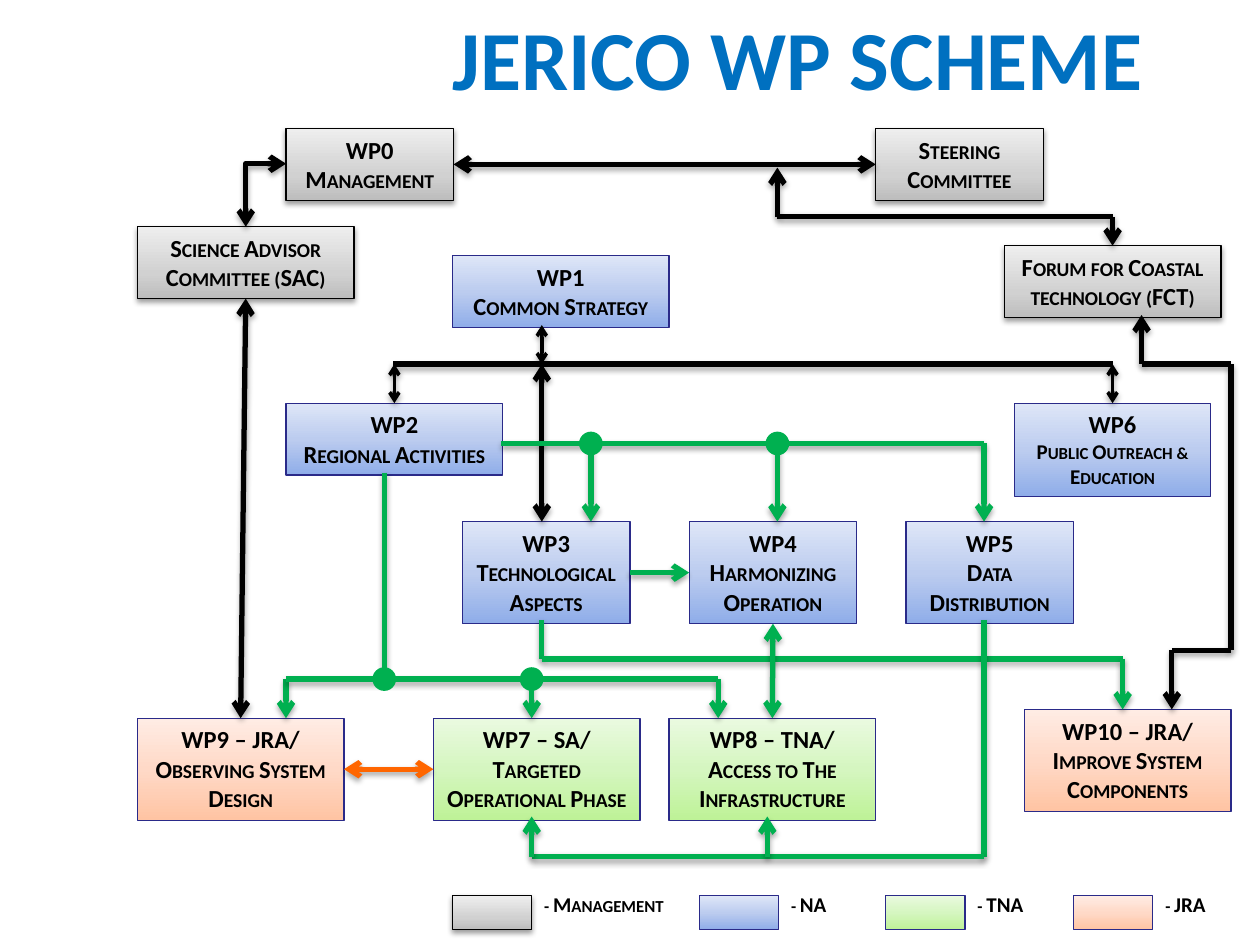
from itertools import pairwise
from copy import deepcopy
from lxml.etree import SubElement
from pptx import Presentation
from pptx.dml.color import RGBColor
from pptx.enum.shapes import MSO_CONNECTOR as CXN, MSO_SHAPE as SHAPE
from pptx.enum.text import MSO_ANCHOR, MSO_AUTO_SIZE, PP_ALIGN
from pptx.oxml.ns import qn
from pptx.util import Pt

PX = 9144  # 100 px to the inch
TOP, LEFT, BOTTOM, RIGHT = range(4)
COLORS = {"black": "000000", "navy": "2A2A89", "title": "0070C0",
          "green": "00B050", "orange": "FF6600"}
GRADIENTS = {
    "management": (0.35, "BDBDBD", "D1D1D1", "EEEEEE"),
    "na": (0.5, "8FADE9", "BCCCEF", "DEE6F7"),
    "tna": (0.5, "BEF297", "D5F6C0", "EAFAE0"),
    "jra": (0.5, "FFC4A3", "FFD9C7", "FFECE4"),
}


class Scheme:
    font = "Calibri"

    def __init__(self, slide):
        self.s = slide

    def rgb(self, name):
        return RGBColor.from_string(COLORS[name])

    def add_shadow(self, effects, dist, alpha):
        shadow = SubElement(effects, qn("a:outerShdw"), blurRad="40000", dist=str(dist),
                            dir="5400000", rotWithShape="0")
        color = SubElement(shadow, qn("a:srgbClr"), val=COLORS["black"])
        SubElement(color, qn("a:alpha"), val=str(alpha * 1000))

    def fill_text(self, shape, paras, color="black", align=PP_ALIGN.CENTER):
        """Fill a shape with paragraphs, each a list of (text, size, small caps) runs."""
        tf = shape.text_frame
        tf.word_wrap = True
        tf.auto_size = MSO_AUTO_SIZE.SHAPE_TO_FIT_TEXT
        tf.vertical_anchor = MSO_ANCHOR.TOP
        for i, runs in enumerate(paras):
            p = tf.add_paragraph() if i else tf.paragraphs[0]
            p.alignment = align
            for text, size, small in runs:
                r = p.add_run()
                r.text = text
                r.font.name, r.font.size, r.font.bold = self.font, Pt(size), True
                r.font.color.rgb = self.rgb(color)
                if small:
                    r.font._element.set("cap", "small")

    def text(self, x, y, w, h, runs, **style):
        self.fill_text(self.s.shapes.add_textbox(x * PX, y * PX, w * PX, h * PX), [runs], **style)

    def box(self, kind, x, y, w, h, *paras):
        sp = self.s.shapes.add_shape(SHAPE.RECTANGLE, x * PX, y * PX, w * PX, h * PX)
        middle, *colors = GRADIENTS[kind]
        sp.fill.gradient()
        sp.fill.gradient_angle = 90
        stops = sp._element.spPr.find(".//" + qn("a:gsLst"))
        stops.insert(1, deepcopy(stops[0]))
        for stop, position, color in zip(sp.fill.gradient_stops, (0, middle, 1), colors):
            stop.position = position
            stop.color.rgb = RGBColor.from_string(color)
        managed = kind == "management"
        sp.line.color.rgb = self.rgb("black" if managed else "navy")
        sp.line.width = Pt(0.75)
        sp.shadow.inherit = False
        if managed:
            self.add_shadow(sp._element.spPr.find(qn("a:effectLst")), 20000, 38)
        if paras:
            self.fill_text(sp, paras)
        return sp

    def style_line(self, cxn, color, head, tail, pt=3):
        cxn.line.color.rgb = self.rgb(color)
        cxn.line.width = Pt(pt)
        ln = cxn.get_or_add_ln()
        for tag, wanted in (("a:headEnd", head), ("a:tailEnd", tail)):
            if wanted:
                SubElement(ln, qn(tag), type="arrow")
        self.add_shadow(SubElement(cxn._element.spPr, qn("a:effectLst")), 23000, 35)

    def route(self, *stops, color="black", head=False, tail=False, pt=3):
        """Join stops by straight lines; a stop is (x, y) or (rectangle, side)."""
        last = len(stops) - 2
        for i, ends in enumerate(pairwise(stops)):
            points = [(a * PX, b * PX) if isinstance(a, int) else (0, 0) for a, b in ends]
            cxn = self.s.shapes.add_connector(CXN.STRAIGHT, *points[0], *points[1])
            for (a, b), connect in zip(ends, (cxn.begin_connect, cxn.end_connect)):
                if not isinstance(a, int):
                    connect(a, b)
            self.style_line(cxn, color, head and i == 0, tail and i == last, pt)

    def corner(self, x, y, w, h):
        """Draw a one-bend double arrow from (x, y) up by h and right by w."""
        left, top = x + (w - h) // 2, y - (h + w) // 2
        cxn = self.s.shapes.add_connector(CXN.ELBOW, (left + h) * PX, (top + w) * PX,
                                          left * PX, top * PX)
        cxn._element.spPr.find(qn("a:xfrm")).set("rot", "5400000")
        cxn._element.spPr.find(qn("a:prstGeom")).set("prst", "bentConnector2")
        self.style_line(cxn, "black", True, True)

    def dot(self, x, y):
        sp = self.s.shapes.add_shape(SHAPE.FLOWCHART_CONNECTOR, (x - 8) * PX, (y - 8) * PX,
                                     16 * PX, 16 * PX)
        sp.fill.solid()
        sp.fill.fore_color.rgb = sp.line.color.rgb = self.rgb("green")
        sp.line.width = Pt(2)
        sp.shadow.inherit = False


def caps(text, size=14):
    return [(text, size, True)]


def plain(text):
    return [(text, 14, False)]


def main():
    prs = Presentation()
    prs.slide_width, prs.slide_height = 1000 * PX, 750 * PX
    d = Scheme(prs.slides.add_slide(prs.slide_layouts[6]))

    d.text(289, 0, 688, 91, [("JERICO WP SCHEME", 48, False)], color="title")
    for kind, x, label in (("management", 359, "Management"), ("na", 555, "NA"),
                           ("tna", 703, "TNA"), ("jra", 852, "JRA")):
        d.box(kind, x, 711, 63, 27)
        d.text(x + 63, 703, 120, 30, caps("- " + label, 12), align=PP_ALIGN.LEFT)

    wp0 = d.box("management", 227, 102, 133, 57, plain("WP0"), caps("Management"))
    steering = d.box("management", 695, 102, 133, 57, caps("Steering Committee"))
    forum = d.box("management", 797, 195, 172, 57, caps("Forum for Coastal technology (FCT)"))
    sac = d.box("management", 109, 180, 172, 57, caps("Science Advisor Committee (SAC)"))

    d.box("na", 359, 203, 172, 57, plain("WP1"), caps("Common Strategy"))
    wp2 = d.box("na", 227, 320, 172, 57, plain("WP2"), caps("Regional Activities"))
    wp3, wp4, _ = [
        d.box("na", x, 414, 133, 81, plain(code), caps(name))
        for x, code, name in ((367, "WP3", "Technological Aspects"),
                              (547, "WP4", "Harmonizing Operation"),
                              (719, "WP5", "Data Distribution"))]
    wp6 = d.box("na", 805, 320, 156, 74, plain("WP6"), caps("Public Outreach & Education", 12))
    wp7, wp8, wp9, _ = [
        d.box(kind, x, y, 164, 81, plain(code + " ") + caps(name))
        for kind, x, y, code, name in (
            ("tna", 344, 570, "WP7 – SA/", "Targeted Operational Phase"),
            ("tna", 531, 570, "WP8 – TNA/", "Access to The Infrastructure"),
            ("jra", 109, 570, "WP9 – JRA/", "Observing System Design"),
            ("jra", 813, 563, "WP10 – JRA/", "Improve System Components"))]

    # Management links
    both = {"head": True, "tail": True}
    d.route((wp0, RIGHT), (steering, LEFT), **both)
    d.route((forum, TOP), (883, 172), (617, 172), (617, 133), **both)
    d.corner(195, 180, 32, 50)
    d.route((sac, BOTTOM), (wp9, TOP), **both)
    d.route((906, 250), (906, 289), (977, 289), (977, 516), (930, 516), (930, 563), **both)

    # Common strategy bus
    d.route((312, 289), (883, 289))
    d.route((313, 289), (wp2, TOP), pt=2, **both)
    d.route((883, 289), (wp6, TOP), pt=2, **both)
    d.route((430, 258), (430, 289), pt=2, **both)
    d.route((430, 289), (430, 414), **both)

    # Work package flows
    flow = {"color": "green", "tail": True}
    d.route((398, 352), (781, 352), (781, 414), **flow)
    for x in (469, 617):
        d.route((x, 352), (x, 414), **flow)
    d.route((wp3, RIGHT), (wp4, LEFT), **flow)
    d.route((430, 492), (430, 523), (891, 523), (891, 563), **flow)
    d.route((227, 570), (227, 539), (570, 539), (570, 570), head=True, **flow)
    d.route((422, 539), (422, 570), **flow)
    d.route((305, 375), (305, 537), color="green")
    d.route((wp4, BOTTOM), (wp8, TOP), head=True, **flow)
    d.route((781, 492), (781, 680), (422, 680), (422, 648), **flow)
    d.route((609, 680), (609, 648), **flow)
    d.route((wp9, RIGHT), (wp7, LEFT), color="orange", **both)
    for x, y in ((305, 539), (422, 539), (617, 352), (469, 352)):
        d.dot(x, y)

    prs.save("out.pptx")


if __name__ == "__main__":
    main()
